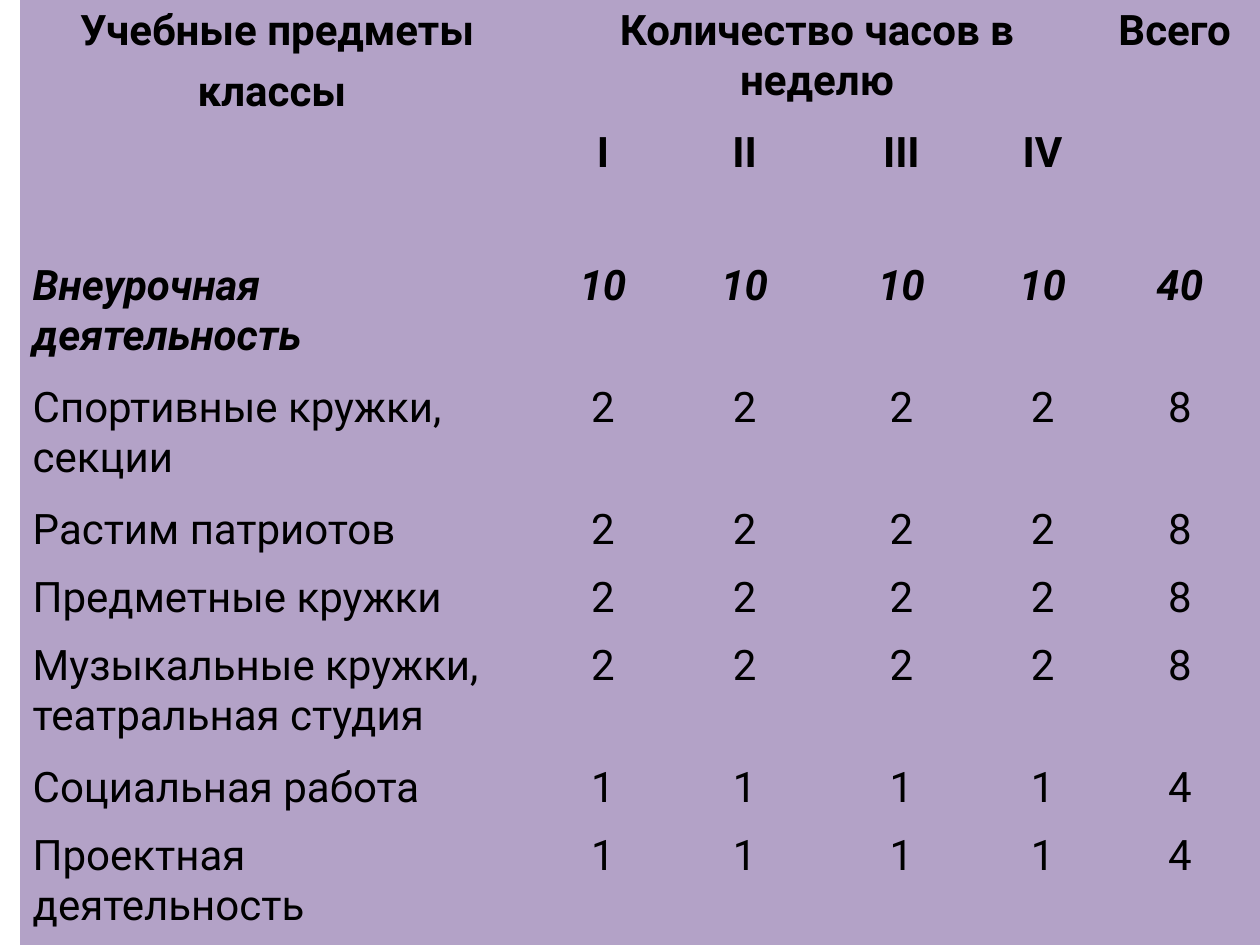
from dataclasses import dataclass

from lxml.etree import SubElement
from pptx import Presentation
from pptx.dml.color import RGBColor
from pptx.enum.text import PP_ALIGN
from pptx.oxml.ns import qn
from pptx.util import Inches, Pt


@dataclass(frozen=True)
class Theme:
    font: str = "Roboto"
    size: int = 24
    space_before: int = 6
    line_spacing: float = 1.01
    text: RGBColor = RGBColor(0x00, 0x00, 0x00)
    cell: RGBColor = RGBColor(0xB3, 0xA2, 0xC7)


THEME = Theme()
COLUMN_WIDTHS = [4.08, 1.09, 1.16, 1.33, 0.91, 1.27]
HEADER_HEIGHTS = [0.97, 1.05]
ONE_LINE, TWO_LINES = 0.54, 0.97
GRADES = ["I", "II", "III", "IV"]
ACTIVITIES = [
    ("Внеурочная деятельность", 10, TWO_LINES),
    ("Спортивные кружки, секции", 2, TWO_LINES),
    ("Растим патриотов", 2, ONE_LINE),
    ("Предметные кружки", 2, ONE_LINE),
    ("Музыкальные кружки, театральная студия", 2, TWO_LINES),
    ("Социальная работа", 1, ONE_LINE),
    ("Проектная деятельность", 1, TWO_LINES),
]


def write_text(cell, text, bold=False, italic=False, align=PP_ALIGN.CENTER):
    cell.text_frame.text = text
    for paragraph in cell.text_frame.paragraphs:
        paragraph.alignment = align
        paragraph.line_spacing = THEME.line_spacing
        paragraph.space_before = Pt(THEME.space_before)
        font = paragraph.runs[0].font
        font.name = THEME.font
        font.size = Pt(THEME.size)
        font.bold = bold
        font.italic = italic
        font.color.rgb = THEME.text


def style_cell(cell):
    properties = cell._tc.get_or_add_tcPr()
    for side in ("a:lnL", "a:lnR", "a:lnT", "a:lnB"):
        SubElement(SubElement(properties, qn(side)), qn("a:noFill"))
    cell.fill.solid()
    cell.fill.fore_color.rgb = THEME.cell


def add_hours_table(slide):
    heights = HEADER_HEIGHTS + [height for _, _, height in ACTIVITIES]
    table = slide.shapes.add_table(
        len(heights), len(COLUMN_WIDTHS),
        Inches(0.16), Inches(0), Inches(9.84), Inches(7.5),
    ).table
    table.first_row = False
    table.horz_banding = False
    for column, width in zip(table.columns, COLUMN_WIDTHS):
        column.width = Inches(width)
    for row, height in zip(table.rows, heights):
        row.height = Inches(height)
    for cell in table.iter_cells():
        style_cell(cell)
    return table


def fill_header(table):
    total_column = len(COLUMN_WIDTHS) - 1
    table.cell(0, 0).merge(table.cell(1, 0))
    table.cell(0, 1).merge(table.cell(0, len(GRADES)))
    table.cell(0, total_column).merge(table.cell(1, total_column))
    write_text(table.cell(0, 0), "Учебные предметы\nклассы ", bold=True)
    write_text(table.cell(0, 1), "Количество часов в неделю", bold=True)
    write_text(table.cell(0, total_column), "Всего ", bold=True)
    for column, grade in enumerate(GRADES, start=1):
        write_text(table.cell(1, column), grade, bold=True)


def fill_activities(table):
    for row, (name, hours, _) in enumerate(ACTIVITIES, start=len(HEADER_HEIGHTS)):
        summary = row == len(HEADER_HEIGHTS)
        write_text(table.cell(row, 0), name, bold=summary, italic=summary, align=PP_ALIGN.LEFT)
        values = [hours] * len(GRADES) + [hours * len(GRADES)]
        for column, value in enumerate(values, start=1):
            write_text(table.cell(row, column), str(value), bold=summary, italic=summary)


def main():
    presentation = Presentation()
    presentation.slide_width = Inches(10)
    presentation.slide_height = Inches(7.5)
    slide = presentation.slides.add_slide(presentation.slide_layouts[6])
    table = add_hours_table(slide)
    fill_header(table)
    fill_activities(table)
    presentation.save("out.pptx")


if __name__ == "__main__":
    main()
